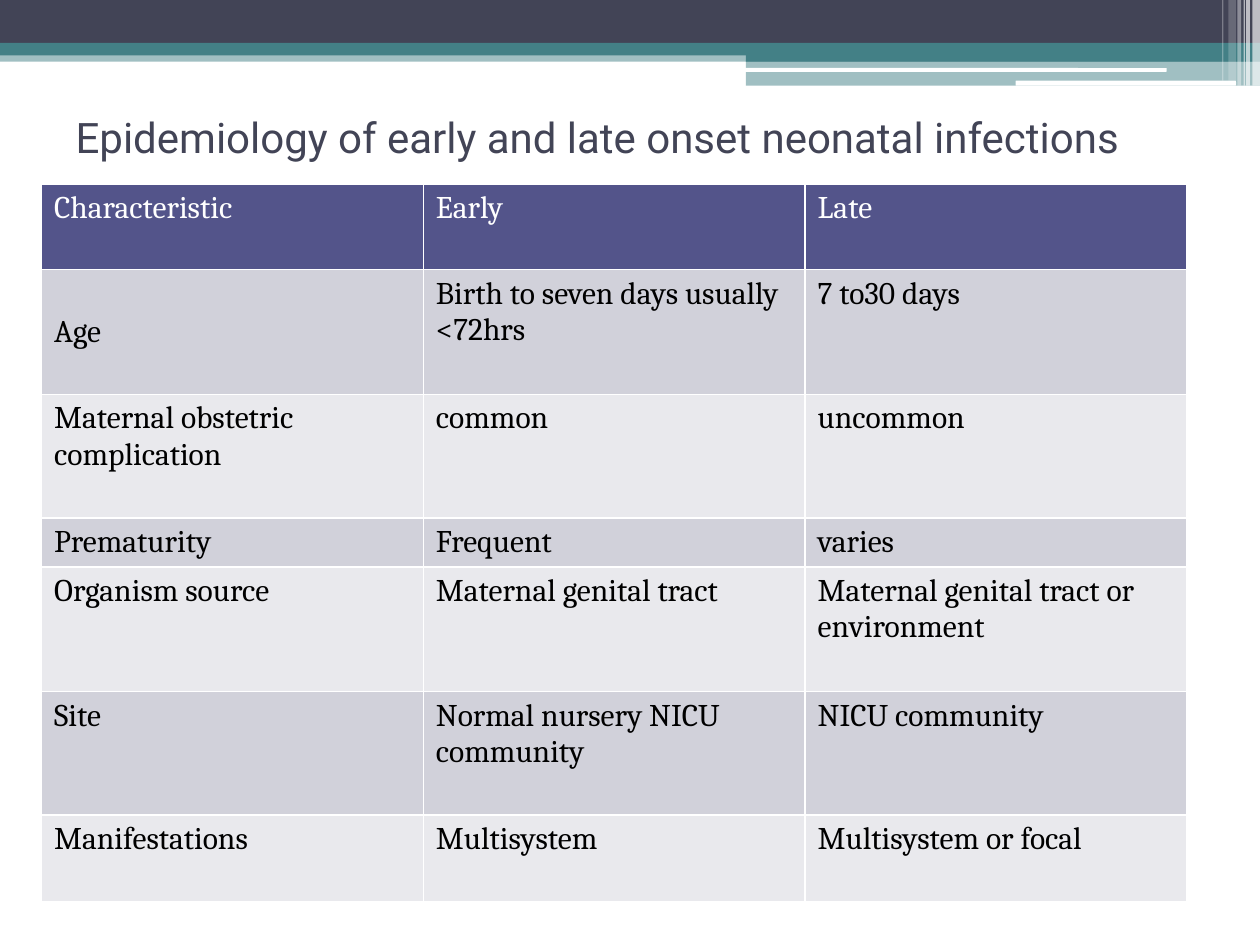
import pptx
import pptx.util
import pptx.dml.color
import pptx.enum.shapes
import pptx.enum.text
from lxml import etree
from pptx.util import Inches, Pt

NAVY, TEAL, WHITE = "424456", "438086", "FFFFFF"
HEAD, BLACK, BANDS = "53548A", "000000", ("D1D1DA", "E9E9ED")
NS = "http://schemas.openxmlformats.org/drawingml/2006/main"

TITLE = "Epidemiology of early and late onset neonatal infections"
ROWS = [
    ("Characteristic", "Early", "Late"),
    ("Age", "Birth to seven days usually <72hrs", "7 to30 days"),
    ("Maternal obstetric complication", "common", "uncommon"),
    ("Prematurity", "Frequent", "varies"),
    ("Organism source", "Maternal genital tract",
     "Maternal genital tract or environment"),
    ("Site", "Normal nursery NICU community", "NICU community"),
    ("Manifestations", "Multisystem", "Multisystem or focal"),
]
HEIGHTS = [0.68, 0.99, 0.98, 0.39, 0.99, 0.98, 0.69]
COL = 3.03

# left, top, width, height, colour, opacity in percent
BARS = [
    (0, 0.4, 10, 0.09, TEAL, 50),
    (0, 0, 10, 0.34, NAVY, 100),
    (0, 0.34, 10, 0.1, TEAL, 100),
    (5.92, 0.39, 4.08, 0.1, TEAL, 100),
    (5.92, 0.48, 4.08, 0.2, TEAL, 50),
]
PILLS = [
    (5.91, 0.54, 3.35, 0.03, WHITE, 100),
    (8.06, 0.64, 1.75, 0.04, WHITE, 100),
]
# left, width, height, opacity in percent
STRIPES = [
    (9.94, 0.06, 0.68, 65),
    (9.89, 0.03, 0.68, 65),
    (9.87, 0.01, 0.68, 60),
    (9.82, 0.03, 0.68, 40),
    (9.75, 0.06, 0.64, 20),
    (9.7, 0.01, 0.64, 30),
]


def paint(fill, color, alpha=100):
    fill.solid()
    fill.fore_color.rgb = pptx.dml.color.RGBColor.from_string(color)
    if alpha < 100:
        node = fill._xPr.find(f".//{{{NS}}}srgbClr")
        etree.SubElement(node, f"{{{NS}}}alpha", val=str(alpha * 1000))


def style(para, name, size, color):
    para.font.name = name
    para.font.size = Pt(size)
    paint(para.font.fill, color)


def add_bar(kind, left, top, width, height, color, alpha):
    bar = slide.shapes.add_shape(
        kind, *(Inches(n) for n in (left, top, width, height)))
    bar.shadow.inherit = False
    bar.line.fill.background()
    paint(bar.fill, color, alpha)


def add_rules(cell):
    """Give a cell thin white borders on all four sides."""
    props = cell._tc.get_or_add_tcPr()
    for side in ("lnL", "lnR", "lnT", "lnB"):
        line = etree.SubElement(props, f"{{{NS}}}{side}", w=str(Pt(1)))
        fill = etree.SubElement(line, f"{{{NS}}}solidFill")
        etree.SubElement(fill, f"{{{NS}}}srgbClr", val=WHITE)


deck = pptx.Presentation()
deck.slide_width, deck.slide_height = Inches(10), Inches(7.5)
slide = deck.slides.add_slide(deck.slide_layouts[5])

shape = pptx.enum.shapes.MSO_SHAPE
for bar in BARS:
    add_bar(shape.RECTANGLE, *bar)
for pill in PILLS:
    add_bar(shape.ROUNDED_RECTANGLE, *pill)
for left, width, height, alpha in STRIPES:
    add_bar(shape.RECTANGLE, left, 0, width, height, WHITE, alpha)

title = slide.shapes.title
title.left, title.top = Inches(0.5), Inches(0.75)
title.width, title.height = Inches(9), Inches(0.67)
title.text_frame.text = TITLE
title.text_frame.vertical_anchor = pptx.enum.text.MSO_ANCHOR.MIDDLE
para = title.text_frame.paragraphs[0]
para.alignment = pptx.enum.text.PP_ALIGN.LEFT
style(para, "Roboto", 24, NAVY)

table = slide.shapes.add_table(
    len(ROWS), len(ROWS[0]), Inches(0.33), Inches(1.46),
    Inches(COL * len(ROWS[0])), Inches(sum(HEIGHTS))).table
for col in table.columns:
    col.width = Inches(COL)
for r, (texts, height) in enumerate(zip(ROWS, HEIGHTS)):
    table.rows[r].height = Inches(height)
    for c, text in enumerate(texts):
        cell = table.cell(r, c)
        cell.text = text
        add_rules(cell)
        paint(cell.fill, BANDS[(r - 1) % 2] if r else HEAD)
        para = cell.text_frame.paragraphs[0]
        style(para, "Cambria", 18, BLACK if r else WHITE)
        para.font.bold = False
table.cell(1, 0).vertical_anchor = pptx.enum.text.MSO_ANCHOR.MIDDLE

deck.save("out.pptx")
